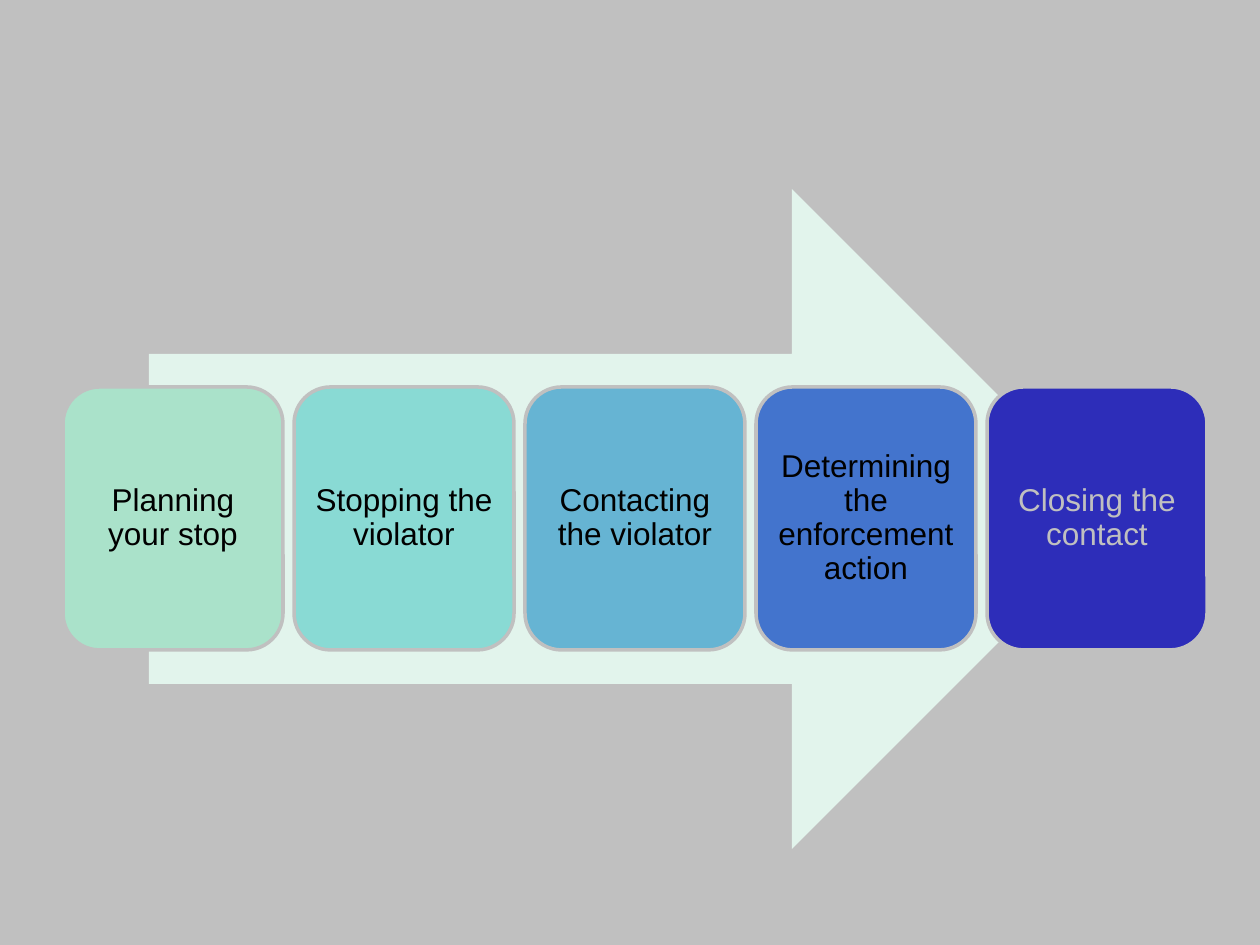
from dataclasses import dataclass

from pptx import Presentation
from pptx.dml.color import RGBColor
from pptx.enum.shapes import MSO_SHAPE as Shape
from pptx.enum.text import MSO_ANCHOR as Anchor, PP_ALIGN as Align
from pptx.shapes.autoshape import Shape as AutoShape
from pptx.slide import Slide
from pptx.util import Emu, Pt

PX_PER_INCH = 126
GRAY = "C0C0C0"
BLACK = "000000"
STEP_LEFT, STEP_TOP = 63, 387
STEP_WIDTH, STEP_HEIGHT = 220, 263
STEP_PITCH = 231
STEP_MARGIN = 9


@dataclass(frozen=True)
class Step:
    label: str
    fill: str
    ink: str = BLACK


STEPS = [
    Step("Planning your stop", "AAE2CA"),
    Step("Stopping the violator", "89DAD4"),
    Step("Contacting the violator", "66B4D3"),
    Step("Determining the enforcement action", "4374CD"),
    Step("Closing the contact", "2D2DB9", GRAY),
]


def px(length: int) -> Emu:
    return Emu(round(length * 914400 / PX_PER_INCH))


def color(value: str) -> RGBColor:
    return RGBColor.from_string(value)


def add_filled(slide: Slide, preset: Shape, left: int, top: int,
               width: int, height: int, fill: str) -> AutoShape:
    filled = slide.shapes.add_shape(preset, px(left), px(top), px(width), px(height))
    filled.shadow.inherit = False
    filled.fill.solid()
    filled.fill.fore_color.rgb = color(fill)
    return filled


def add_arrow(slide: Slide) -> None:
    arrow = add_filled(slide, Shape.RIGHT_ARROW, 149, 189, 973, 660, "E2F4EC")
    arrow.line.fill.background()


def add_step(slide: Slide, step: Step, left: int) -> None:
    card = add_filled(slide, Shape.ROUNDED_RECTANGLE, left, STEP_TOP,
                      STEP_WIDTH, STEP_HEIGHT, step.fill)
    card.line.color.rgb = color(GRAY)
    card.line.width = Pt(2)

    frame = card.text_frame
    frame.word_wrap = True
    frame.vertical_anchor = Anchor.MIDDLE
    frame.margin_left = frame.margin_right = px(STEP_MARGIN)
    frame.margin_top = frame.margin_bottom = px(STEP_MARGIN)

    label = frame.paragraphs[0]
    label.text = step.label
    label.alignment = Align.CENTER
    label.line_spacing = 0.9
    label.font.name = "Arial"
    label.font.size = Pt(18)
    label.font.color.rgb = color(step.ink)


def main() -> None:
    deck = Presentation()
    deck.slide_width, deck.slide_height = px(1260), px(945)
    slide = deck.slides.add_slide(deck.slide_layouts[6])
    slide.background.fill.solid()
    slide.background.fill.fore_color.rgb = color(GRAY)

    add_arrow(slide)
    for index, step in enumerate(STEPS):
        add_step(slide, step, STEP_LEFT + index * STEP_PITCH)

    deck.save("out.pptx")


if __name__ == "__main__":
    main()
